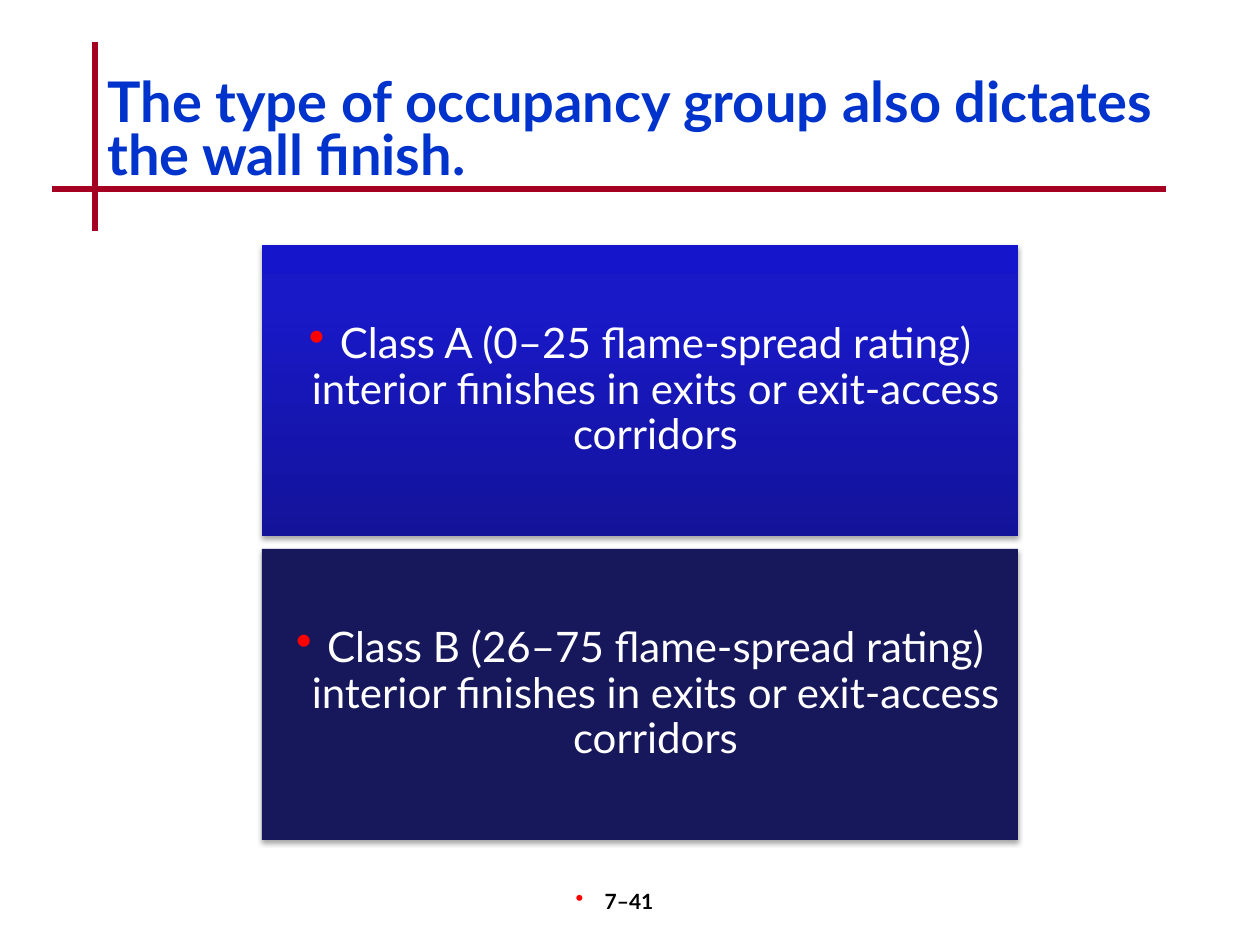
from lxml.etree import SubElement
from pptx import Presentation
from pptx.dml.color import RGBColor
from pptx.enum.shapes import MSO_CONNECTOR as CONNECTOR, MSO_SHAPE as SHAPE
from pptx.enum.text import MSO_ANCHOR as ANCHOR, PP_ALIGN as ALIGN
from pptx.oxml.ns import qn
from pptx.util import Emu, Pt

PX_PER_INCH = 126
FONT = "Lato"
RED = RGBColor(0xFF, 0x00, 0x00)
CRIMSON = RGBColor(0xA5, 0x00, 0x21)
TITLE_BLUE = RGBColor(0x00, 0x33, 0xCC)
NAVY = RGBColor(0x17, 0x17, 0x5C)
BLACK = RGBColor(0x00, 0x00, 0x00)
WHITE = RGBColor(0xFF, 0xFF, 0xFF)
BLUE_STOPS = [
    (0, RGBColor(0x13, 0x13, 0x9A)),
    (80, RGBColor(0x19, 0x19, 0xC8)),
    (100, RGBColor(0x15, 0x15, 0xCC)),
]

TITLE_FORMAT = {"size": Pt(32), "bold": True}
PANEL_FORMAT = {"size": Pt(24), "bold": False}
FOOTER_FORMAT = {"size": Pt(12), "bold": True}

PANEL_LEFT, PANEL_TOP, PANEL_WIDTH, PANEL_HEIGHT = 262, 245, 756, 291
PANEL_PITCH = 304
PANELS = [("A (0–25", BLUE_STOPS), ("B (26–75", NAVY)]


def px(length):
    return Emu(round(length * 914400 / PX_PER_INCH))


def add_child(parent, tag, **attributes):
    child = SubElement(parent, qn(tag))
    for name, value in attributes.items():
        child.set(name, str(value))
    return child


def add_rule(slide, x1, y1, x2, y2):
    rule = slide.shapes.add_connector(CONNECTOR.STRAIGHT, px(x1), px(y1), px(x2), px(y2))
    rule.line.color.rgb = CRIMSON
    rule.line.width = Pt(3)
    add_child(rule._element.spPr, "a:effectLst")


def add_bullet(paragraph, margin, hanging):
    properties = paragraph._p.get_or_add_pPr()
    properties.set("marL", str(px(margin)))
    properties.set("indent", str(-px(hanging)))
    add_child(add_child(properties, "a:buClr"), "a:srgbClr", val=RED)
    add_child(properties, "a:buSzPct", val=110000)
    add_child(properties, "a:buChar", char="•")


def write_text(shape, text, color, font_format, align, line_spacing=1.0, bullet=None):
    shape.text_frame.word_wrap = True
    paragraph = shape.text_frame.paragraphs[0]
    paragraph.alignment = align
    paragraph.line_spacing = line_spacing
    if bullet:
        add_bullet(paragraph, *bullet)
    run = paragraph.add_run()
    run.text = text
    run.font.name = FONT
    run.font.color.rgb = color
    for name, value in font_format.items():
        setattr(run.font, name, value)


def fill_gradient(shape, stops):
    shape.fill.gradient()
    shape.fill.gradient_angle = 90
    stop_list = shape._element.spPr.find(qn("a:gradFill")).find(qn("a:gsLst"))
    for old_stop in list(stop_list):
        stop_list.remove(old_stop)
    for position, color in stops:
        stop = add_child(stop_list, "a:gs", pos=position * 1000)
        add_child(stop, "a:srgbClr", val=color)


def add_shadow(shape):
    shape.shadow.inherit = False
    effects = shape._element.spPr.find(qn("a:effectLst"))
    shadow = add_child(effects, "a:outerShdw", blurRad=Pt(3.1), dist=Pt(1.8),
                       dir=90 * 60000, rotWithShape=0)
    add_child(add_child(shadow, "a:srgbClr", val=BLACK), "a:alpha", val=35000)


def add_panel(slide, top, text, fill):
    panel = slide.shapes.add_shape(SHAPE.RECTANGLE, px(PANEL_LEFT), px(top),
                                   px(PANEL_WIDTH), px(PANEL_HEIGHT))
    if isinstance(fill, list):
        fill_gradient(panel, fill)
    else:
        panel.fill.solid()
        panel.fill.fore_color.rgb = fill
    panel.line.fill.background()
    add_shadow(panel)
    frame = panel.text_frame
    frame.vertical_anchor = ANCHOR.MIDDLE
    for side in ("left", "top", "right", "bottom"):
        setattr(frame, f"margin_{side}", px(13))
    write_text(panel, text, WHITE, PANEL_FORMAT, ALIGN.CENTER, 0.9, bullet=(31, 31))


def main():
    presentation = Presentation()
    presentation.slide_width = px(1260)
    presentation.slide_height = px(945)
    slide = presentation.slides.add_slide(presentation.slide_layouts[6])

    # Crossed rules beside the title
    add_rule(slide, 95, 42, 95, 231)
    add_rule(slide, 52, 189, 1166, 189)

    # Page number
    footer = slide.shapes.add_textbox(px(494), px(882), px(262), px(63))
    write_text(footer, "7–41", BLACK, FOOTER_FORMAT, ALIGN.CENTER, bullet=(6, 29))

    # Title
    title = slide.shapes.add_textbox(px(95), px(73), px(1071), px(126))
    write_text(title, "The type of occupancy group also dictates the wall finish.",
               TITLE_BLUE, TITLE_FORMAT, ALIGN.LEFT, 0.8)

    # Finish class panels
    for row, (rating, fill) in enumerate(PANELS):
        text = (f"Class {rating} flame-spread rating) interior finishes "
                "in exits or exit-access corridors")
        add_panel(slide, PANEL_TOP + row * PANEL_PITCH, text, fill)

    presentation.save("out.pptx")


if __name__ == "__main__":
    main()
